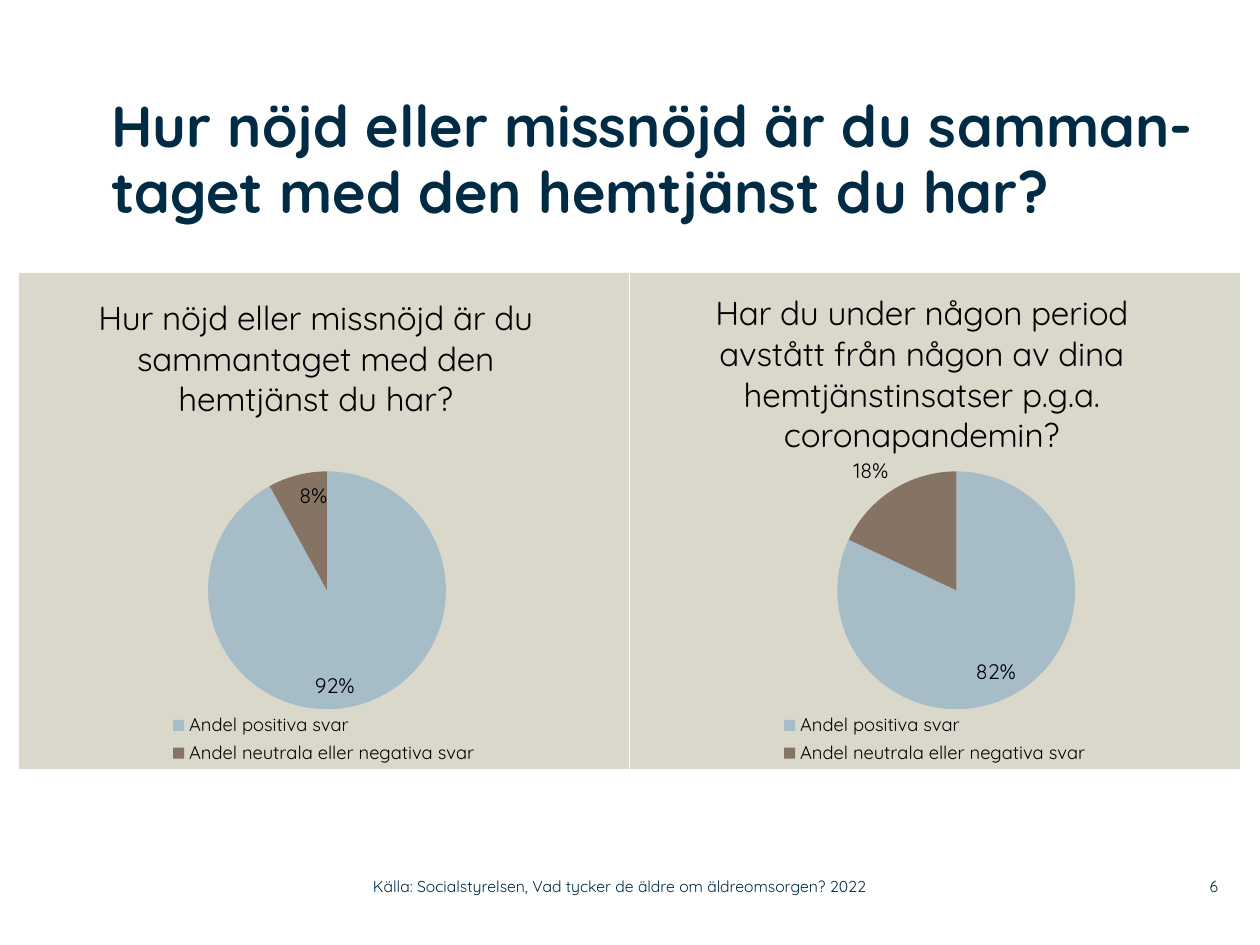
from pptx import Presentation
from pptx.chart.data import CategoryChartData
from pptx.dml.color import RGBColor
from pptx.enum.chart import XL_CHART_TYPE, XL_LABEL_POSITION as LabelPos, XL_LEGEND_POSITION as LegendPos
from pptx.enum.text import MSO_ANCHOR as Anchor, PP_ALIGN as Align
from pptx.oxml import parse_xml
from pptx.oxml.ns import nsdecls
from pptx.util import Emu, Pt

FONT = "Quicksand"
NAVY, BLACK, SAND = "002B45", "000000", "DAD7CB"
ANSWERS = {"Andel positiva svar": "A6BCC6", "Andel neutrala eller negativa svar": "857363"}


def px(length):
    return Emu(round(length * 914400 / 126))


def color(hex_code):
    return RGBColor.from_string(hex_code)


def style_font(font, size, hex_code, bold=False):
    font.name, font.size, font.bold = FONT, Pt(size), bold
    font.color.rgb = color(hex_code)


def add_text(slide, box, text, size, align=Align.LEFT, anchor=Anchor.MIDDLE, bold=False, spacing=None):
    frame = slide.shapes.add_textbox(*map(px, box)).text_frame
    frame.word_wrap = True
    frame.vertical_anchor = anchor
    frame.margin_left = frame.margin_right = frame.margin_top = frame.margin_bottom = 0
    paragraph = frame.paragraphs[0]
    paragraph.text = text
    paragraph.alignment = align
    paragraph.line_spacing = spacing
    style_font(paragraph.font, size, NAVY, bold)


def set_layout(element, index, inner=False, **fractions):
    """Place a chart part by fractions of the chart area."""
    for old in element.xpath("c:layout"):
        element.remove(old)
    target = '<c:layoutTarget val="inner"/>' if inner else ""
    modes = "".join(f'<c:{key}Mode val="edge"/>' for key in "xy")
    values = "".join(f'<c:{key} val="{value}"/>' for key, value in fractions.items())
    element.insert(index, parse_xml(
        f'<c:layout {nsdecls("c")}><c:manualLayout>{target}{modes}{values}</c:manualLayout></c:layout>'))


def add_answer_pie(slide, box, question, shares, title_at, pie_left, outside=None):
    data = CategoryChartData()
    data.categories = list(ANSWERS)
    data.add_series("Andel", shares)
    chart = slide.shapes.add_chart(XL_CHART_TYPE.PIE, *map(px, box), data).chart
    style_font(chart.font, 18, BLACK)
    chart.element.xpath("c:txPr")[0].addprevious(parse_xml(
        f'<c:spPr {nsdecls("c", "a")}><a:solidFill><a:srgbClr val="{SAND}"/></a:solidFill>'
        '<a:ln><a:noFill/></a:ln></c:spPr>'))

    # Question above the pie
    chart.has_title = True
    heading = chart.chart_title.text_frame.paragraphs[0]
    heading.text = question
    style_font(heading.font, 19, BLACK)
    chart.chart_title.include_in_layout = False
    set_layout(chart.element.xpath("c:chart/c:title")[0], 1, x=title_at[0], y=title_at[1])

    # Legend below the pie
    chart.has_legend = True
    chart.legend.position = LegendPos.BOTTOM
    chart.legend.include_in_layout = False
    style_font(chart.legend.font, 10.5, BLACK)
    set_layout(chart.element.xpath("c:chart/c:legend")[0], 1, x=0.24, y=0.88, w=0.52, h=0.12)

    # Slices and their percentages
    set_layout(chart.element.xpath("c:chart/c:plotArea")[0], 0, inner=True,
               x=pie_left, y=0.4, w=0.39, h=0.48)
    plot = chart.plots[0]
    plot.vary_by_categories = True
    series = plot.series[0]
    for index, slice_color in enumerate(ANSWERS.values()):
        fill = series.points[index].format.fill
        fill.solid()
        fill.fore_color.rgb = color(slice_color)
    labels = series.data_labels
    labels.show_value = False
    labels.show_percentage = True
    labels.number_format, labels.number_format_is_linked = "0%", False
    labels.position = LabelPos.INSIDE_END
    style_font(labels.font, 12, BLACK)
    if outside is not None:
        label = series.points[outside].data_label
        style_font(label.font, 12, BLACK)
        label.position = LabelPos.OUTSIDE_END
        for tag, flag in (("showVal", "0"), ("showPercent", "1")):
            chart.element.xpath(f".//c:dLbl/c:{tag}")[0].set("val", flag)


def main():
    presentation = Presentation()
    presentation.slide_width, presentation.slide_height = px(1260), px(945)
    slide = presentation.slides.add_slide(presentation.slide_layouts[6])

    # Heading
    add_text(slide, (111, 94, 1126, 179),
             "Hur nöjd eller missnöjd är du samman-taget med den hemtjänst du har?",
             33, anchor=Anchor.TOP, bold=True, spacing=0.96)

    # Two questions side by side
    add_answer_pie(slide, (19, 273, 610, 496),
                   "Hur nöjd eller missnöjd är du sammantaget med den hemtjänst du har?",
                   (92, 8), (0.12, 0.03), 0.31)
    add_answer_pie(slide, (630, 273, 610, 496),
                   "Har du under någon period avstått från någon av dina hemtjänstinsatser "
                   "p.g.a. coronapandemin?",
                   (82, 18), (0.13, 0.02), 0.34, outside=1)

    # Footer
    add_text(slide, (373, 868, 558, 37),
             "Källa: Socialstyrelsen, Vad tycker de äldre om äldreomsorgen? 2022", 9)
    add_text(slide, (1159, 868, 59, 37), "6", 9, Align.RIGHT)

    presentation.save("out.pptx")


if __name__ == "__main__":
    main()
